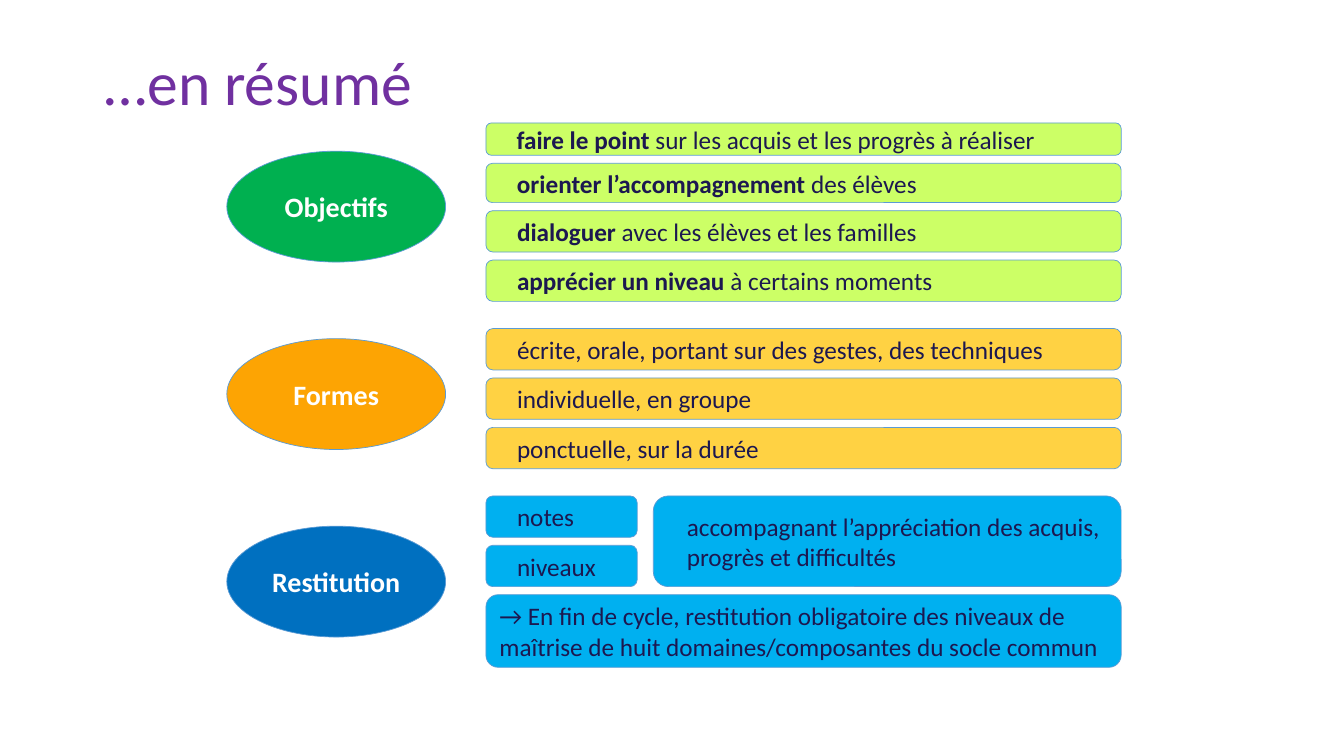
from pptx import Presentation
from pptx.dml.color import RGBColor
from pptx.enum.shapes import MSO_SHAPE
from pptx.enum.text import MSO_ANCHOR, PP_ALIGN
from pptx.util import Inches, Pt

ELLIPSE, ROUNDED = MSO_SHAPE.OVAL, MSO_SHAPE.ROUNDED_RECTANGLE
MIDDLE = MSO_ANCHOR.MIDDLE
LEFT, CENTER = PP_ALIGN.LEFT, PP_ALIGN.CENTER

FONT = "Calibri"
PURPLE = RGBColor(0x70, 0x30, 0xA0)
WHITE = RGBColor(0xFF, 0xFF, 0xFF)
NAVY = RGBColor(0x1C, 0x18, 0x50)
OUTLINE = RGBColor(0x5B, 0x9B, 0xD5)
GREEN, LIME = RGBColor(0x00, 0xB0, 0x50), RGBColor(0xCC, 0xFF, 0x66)
ORANGE, YELLOW = RGBColor(0xFD, 0xA4, 0x03), RGBColor(0xFF, 0xD2, 0x43)
BLUE, SKY = RGBColor(0x00, 0x70, 0xC0), RGBColor(0x00, 0xB0, 0xF0)

# Content: a bar is (bold words, plain words, width, height, indent)
TITLE = "…en résumé"
FULL, SHORT, ROW, INDENT = 6.3, 1.5, 0.41, 0.19
# theme, ellipse colour, bar colour, top of first bar, bars
THEMES = [
    ("Objectifs", GREEN, LIME, 1.22, [
        ("faire le point", " sur les acquis et les progrès à réaliser", FULL, 0.32, INDENT),
        ("orienter l’accompagnement", " des élèves", FULL, 0.39, INDENT),
        ("dialoguer", " avec les élèves et les familles", FULL, ROW, INDENT),
        ("apprécier un niveau", " à certains moments", FULL, ROW, INDENT),
    ]),
    ("Formes", ORANGE, YELLOW, 3.26, [
        ("", "écrite, orale, portant sur des gestes, des techniques", FULL, ROW, INDENT),
        ("", "individuelle, en groupe", FULL, ROW, INDENT),
        ("", "ponctuelle, sur la durée", FULL, ROW, INDENT),
    ]),
    ("Restitution", BLUE, SKY, 4.92, [
        ("", "notes", SHORT, ROW, INDENT),
        ("", "niveaux", SHORT, ROW, INDENT),
        ("", "→ En fin de cycle, restitution obligatoire des niveaux de "
             "maîtrise de huit domaines/composantes du socle commun", FULL, 0.72, 0),
    ]),
]
COMMENT = "accompagnant l’appréciation des acquis, progrès et difficultés"

# Layout
ELLIPSE_LEFT, ELLIPSE_TOP, ELLIPSE_W, ELLIPSE_H = 2.25, 1.5, 2.17, 1.1
ELLIPSE_PITCH = 1.86
BAR_LEFT, BAR_GAP = 4.82, 0.08
COMMENT_LEFT = 6.48


def add_box(slide, kind, left, top, width, height, fill):
    box = slide.shapes.add_shape(
        kind, Inches(left), Inches(top), Inches(width), Inches(height))
    box.shadow.inherit = False
    box.fill.solid()
    box.fill.fore_color.rgb = fill
    box.line.color.rgb = OUTLINE
    box.line.width = Pt(0.5)
    box.text_frame.word_wrap = True
    box.text_frame.vertical_anchor = MIDDLE
    return box


def style(paragraph, size, color, align=LEFT):
    paragraph.alignment = align
    paragraph.font.name = FONT
    paragraph.font.size = Pt(size)
    paragraph.font.color.rgb = color


def add_bar(slide, left, top, width, height, fill, bold, plain, indent):
    bar = add_box(slide, ROUNDED, left, top, width, height, fill)
    paragraph = bar.text_frame.paragraphs[0]
    style(paragraph, 18, NAVY)
    properties = paragraph._p.get_or_add_pPr()
    properties.set("marL", str(Inches(indent)))
    properties.set("indent", "0")
    if bold:
        key_words = paragraph.add_run()
        key_words.text = bold
        key_words.font.bold = True
    paragraph.add_run().text = plain


def main():
    prs = Presentation()
    prs.slide_width, prs.slide_height = Inches(13.33), Inches(7.5)
    slide = prs.slides.add_slide(prs.slide_layouts[5])

    # Title
    title = slide.shapes.title
    title.left, title.top = Inches(0.94), Inches(0.12)
    title.width, title.height = Inches(11.5), Inches(1.45)
    title.text_frame.text = TITLE
    title.text_frame.vertical_anchor = MIDDLE
    heading = title.text_frame.paragraphs[0]
    style(heading, 44, PURPLE)
    heading.line_spacing = 0.9

    # Themes, each with its stack of bars
    for i, (theme, theme_fill, bar_fill, top, bars) in enumerate(THEMES):
        ellipse = add_box(slide, ELLIPSE, ELLIPSE_LEFT, ELLIPSE_TOP + i * ELLIPSE_PITCH,
                          ELLIPSE_W, ELLIPSE_H, theme_fill)
        frame = ellipse.text_frame
        frame.margin_left = frame.margin_right = 0
        frame.text = theme
        style(frame.paragraphs[0], 20, WHITE, CENTER)
        frame.paragraphs[0].font.bold = True

        for bold, plain, width, height, indent in bars:
            add_bar(slide, BAR_LEFT, top, width, height, bar_fill, bold, plain, indent)
            top += height + BAR_GAP

    # Comment beside the two short bars
    add_bar(slide, COMMENT_LEFT, THEMES[-1][3], BAR_LEFT + FULL - COMMENT_LEFT,
            2 * ROW + BAR_GAP, SKY, "", COMMENT, INDENT)

    prs.save("out.pptx")


if __name__ == "__main__":
    main()
